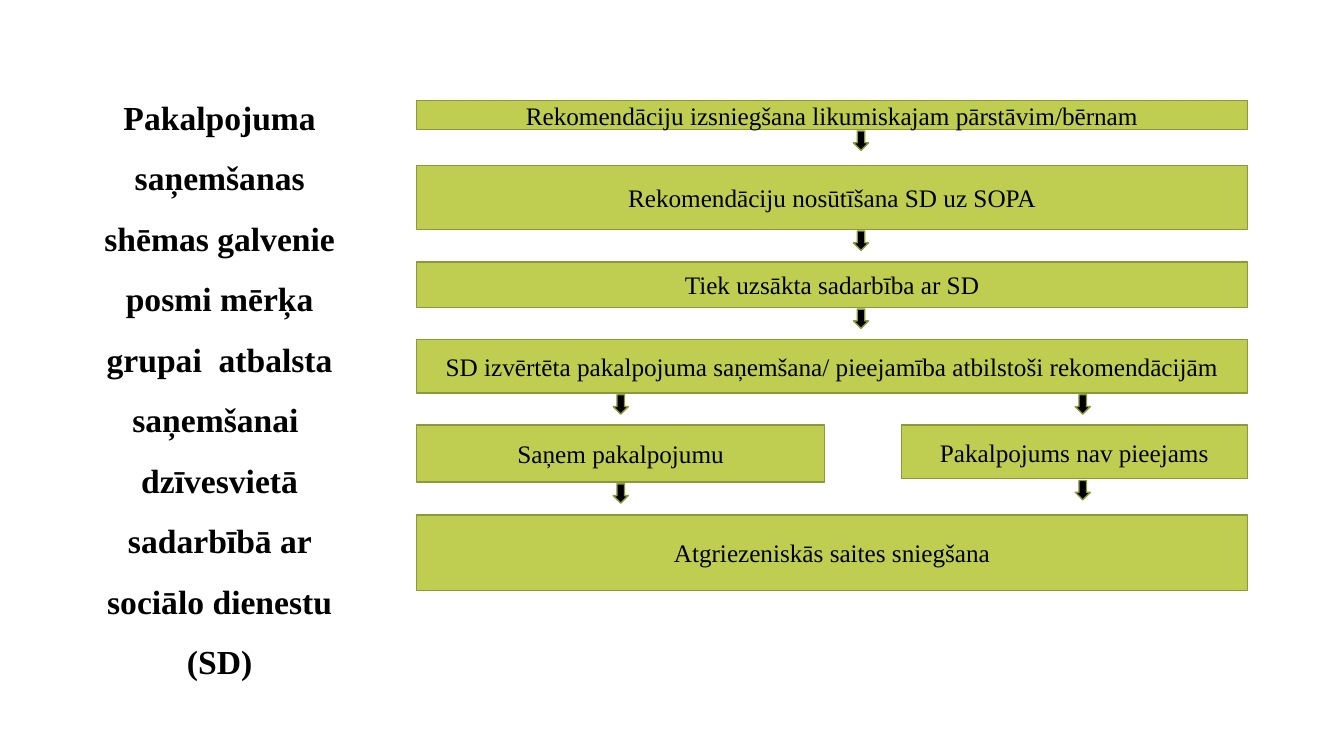
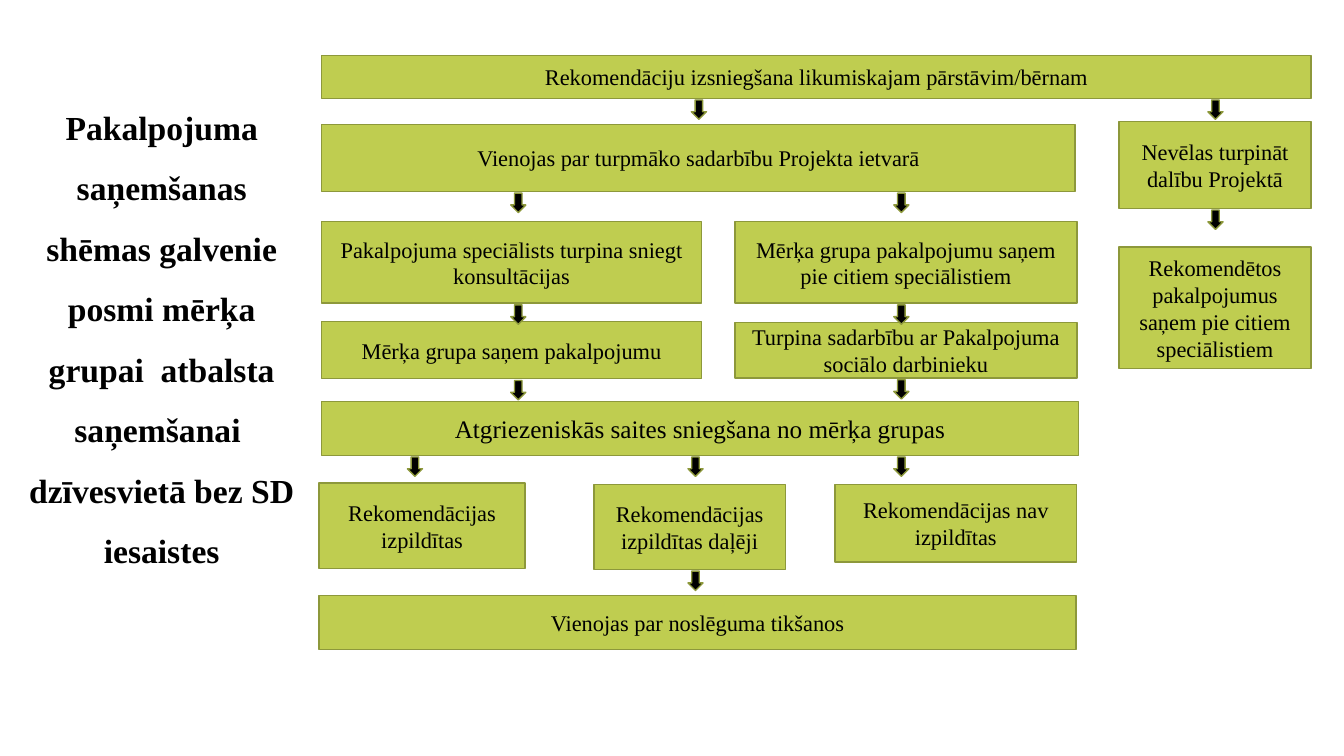
from pptx import Presentation
from pptx.dml.color import RGBColor
from pptx.enum.shapes import MSO_SHAPE as Preset
from pptx.enum.text import MSO_ANCHOR as Anchor, MSO_AUTO_SIZE as AutoSize, PP_ALIGN as Align
from pptx.util import Inches, Pt

BLACK = RGBColor(0x00, 0x00, 0x00)
LIME = RGBColor(0xBF, 0xCD, 0x50)
OLIVE = RGBColor(0x8D, 0x98, 0x3B)
FONT = "Times New Roman"

GRID_COLUMNS = 160
GRID_ROWS = 90
TITLE_SIZE = (34.7, 63.8)
ARROW_SIZE = (1.8, 2.3)
ARROW_GAP = 0.2
TITLE_ONLY = 5


class FlowDeck:
    """Holds the style and the current page; lengths are grid columns and rows."""

    def __init__(self):
        self.deck = Presentation()
        self.deck.slide_width = Inches(13.33)
        self.deck.slide_height = Inches(7.5)
        self.column = self.deck.slide_width / GRID_COLUMNS
        self.row = self.deck.slide_height / GRID_ROWS
        self.page = None

    def place(self, left, top, width, height):
        """Turn grid units into slide lengths."""
        return (round(left * self.column), round(top * self.row),
                round(width * self.column), round(height * self.row))

    def add_text(self, frame, text, size, bold=False):
        frame.word_wrap = True
        para = frame.paragraphs[0]
        para.alignment = Align.CENTER
        span = para.add_run()
        span.text = text
        span.font.name = FONT
        span.font.size = Pt(size)
        span.font.bold = bold
        span.font.color.rgb = BLACK
        return para

    def add_page(self, title, left, top):
        self.page = self.deck.slides.add_slide(self.deck.slide_layouts[TITLE_ONLY])
        box = self.page.shapes.title
        box.left, box.top, box.width, box.height = self.place(left, top, *TITLE_SIZE)
        frame = box.text_frame
        frame.auto_size = AutoSize.NONE
        frame.vertical_anchor = Anchor.TOP
        para = self.add_text(frame, title, 24, bold=True)
        para.line_spacing = 1.5
        para.space_before = Pt(10)

    def add_preset(self, preset, area, fill):
        shape = self.page.shapes.add_shape(preset, *self.place(*area))
        shape.shadow.inherit = False
        shape.fill.solid()
        shape.fill.fore_color.rgb = fill
        shape.line.color.rgb = OLIVE
        shape.line.width = Pt(1)
        return shape

    def add_step(self, text, area, size):
        box = self.add_preset(Preset.RECTANGLE, area, LIME)
        box.text_frame.vertical_anchor = Anchor.MIDDLE
        self.add_text(box.text_frame, text, size)

    def add_arrow(self, center, top):
        width, height = ARROW_SIZE
        self.add_preset(Preset.DOWN_ARROW, (center - width / 2, top, width, height), BLACK)

    def add_flow(self, steps, size):
        """Draw (text, area, arrow centers, optional size), with arrows under each box."""
        for text, area, _, *own_size in steps:
            self.add_step(text, area, *(own_size or [size]))
        for _, (_, top, _, height), centers, *_ in steps:
            for center in centers:
                self.add_arrow(center, top + height + ARROW_GAP)


TITLE_START = "Pakalpojuma saņemšanas shēmas galvenie posmi mērķa grupai  atbalsta saņemšanai  dzīvesvietā "
FIRST_STEP = "Rekomendāciju izsniegšana likumiskajam pārstāvim/bērnam"


def with_service(flow):
    left, width = 49.6, 98.9
    middle, receive, unavailable = 102.5, 73.9, 128.9
    flow.add_page(TITLE_START + "sadarbībā ar sociālo dienestu (SD)", 8.8, 8.5)
    flow.add_flow([
        (FIRST_STEP, (left, 12, width, 3.4), [middle]),
        ("Rekomendāciju nosūtīšana SD uz SOPA", (left, 19.7, width, 7.6), [middle]),
        ("Tiek uzsākta sadarbība ar SD", (left, 31.2, width, 5.4), [middle]),
        ("SD izvērtēta pakalpojuma saņemšana/ pieejamība atbilstoši rekomendācijām",
         (left, 40.4, width, 6.4), [receive, unavailable]),
        ("Saņem pakalpojumu", (left, 50.6, 48.6, 6.8), [receive]),
        ("Pakalpojums nav pieejams", (107.3, 50.6, 41.2, 6.4), [unavailable]),
        ("Atgriezeniskās saites sniegšana", (left, 61.3, width, 9), []),
    ], 18)


def without_service(flow):
    left, second, side = 38.3, 87.5, 133.2
    wide, first_width, second_width, side_width = 90.1, 45.2, 40.7, 22.9
    first_arrow, middle, second_arrow, side_arrow = 61.7, 82.8, 107.3, 144.7
    flow.add_page(TITLE_START + "bez SD iesaistes", 1.9, 9.7)
    flow.add_flow([
        (FIRST_STEP, (left, 6.6, 117.8, 5.1), [83.2, side_arrow]),
        ("Vienojas par turpmāko sadarbību Projekta ietvarā",
         (left, 14.8, 89.7, 8), [first_arrow, second_arrow]),
        ("Nevēlas turpināt dalību Projektā", (side, 14.5, side_width, 10.3), [side_arrow]),
        ("Rekomendētos pakalpojumus saņem pie citiem speciālistiem",
         (side, 29.4, side_width, 14.5), []),
        ("Pakalpojuma speciālists turpina sniegt konsultācijas",
         (left, 26.4, first_width, 9.7), [first_arrow]),
        ("Mērķa grupa pakalpojumu saņem pie citiem speciālistiem",
         (second, 26.4, second_width, 9.7), [second_arrow]),
        ("Mērķa grupa saņem pakalpojumu", (left, 38.3, first_width, 6.8), [first_arrow]),
        ("Turpina sadarbību ar Pakalpojuma sociālo darbinieku",
         (second, 38.4, second_width, 6.6), [second_arrow]),
        ("Atgriezeniskās saites sniegšana no mērķa grupas",
         (left, 47.8, wide, 6.4), [49.4, middle, second_arrow], 18),
        ("Rekomendācijas izpildītas", (38, 57.5, 24.5, 10.2), []),
        ("Rekomendācijas izpildītas daļēji", (70.7, 57.7, 22.8, 10.1), [middle]),
        ("Rekomendācijas nav izpildītas", (99.4, 57.7, 28.8, 9.2), []),
        ("Vienojas par noslēguma tikšanos", (38, 70.9, wide, 6.4), []),
    ], 16)


def main():
    flow = FlowDeck()
    with_service(flow)
    without_service(flow)
    flow.deck.save("out.pptx")


if __name__ == "__main__":
    main()
